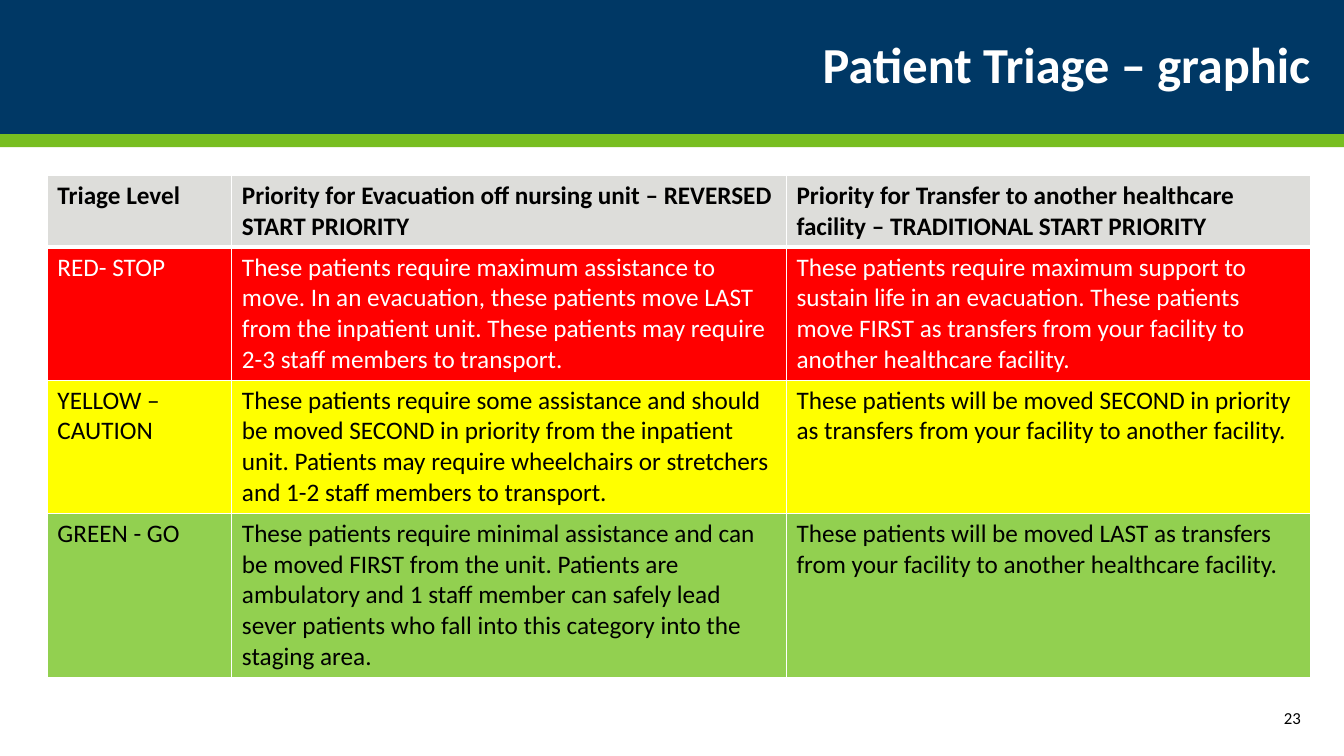
import lxml.etree
import pptx
import pptx.dml.color
import pptx.enum.shapes
import pptx.enum.text
import pptx.oxml.ns
import pptx.util
from pptx.util import Inches

FONT = "Calibri"
COLUMN_WIDTHS = (1.83, 5.5, 5.2)
ROW_HEIGHTS = (0.71, 1.32, 1.32, 1.62)
ROW_COLOURS = (
    ("DDDDDA", "000000"),
    ("FF0000", "FFFFFF"),
    ("FFFF00", "000000"),
    ("92D050", "000000"),
)
TRIAGE_ROWS = (
    (
        "Triage Level",
        "Priority for Evacuation off nursing unit – REVERSED START PRIORITY",
        "Priority for Transfer to another healthcare facility – TRADITIONAL START PRIORITY",
    ),
    (
        "RED- STOP",
        "These patients require maximum assistance to move. In an evacuation, these patients "
        "move LAST from the inpatient unit. These patients may require 2-3 staff members to transport.",
        "These patients require maximum support to sustain life in an evacuation. These patients "
        "move FIRST as transfers from your facility to another healthcare facility.",
    ),
    (
        "YELLOW – CAUTION",
        "These patients require some assistance and should be moved SECOND in priority from the "
        "inpatient unit. Patients may require wheelchairs or stretchers and 1-2 staff members to transport.",
        "These patients will be moved SECOND in priority as transfers from your facility to another facility.",
    ),
    (
        "GREEN - GO",
        "These patients require minimal assistance and can be moved FIRST from the unit. Patients are "
        "ambulatory and 1 staff member can safely lead sever patients who fall into this category "
        "into the staging area.",
        "These patients will be moved LAST as transfers from your facility to another healthcare facility.",
    ),
)


def colour(value):
    """Return the colour for a hex string."""
    return pptx.dml.color.RGBColor.from_string(value)


def write(frame, text, size=18, ink="000000", bold=False, align="LEFT", spacing=1.0):
    """Put one formatted paragraph into a text frame."""
    para = frame.paragraphs[0]
    para.alignment = getattr(pptx.enum.text.PP_ALIGN, align)
    para.line_spacing = spacing
    span = para.add_run()
    span.text = text
    span.font.name = FONT
    span.font.size = pptx.util.Pt(size)
    span.font.bold = bold
    span.font.color.rgb = colour(ink)


def add_border(cell, side, width):
    """Draw a white border on one side of a cell."""
    qn = pptx.oxml.ns.qn
    properties = cell._tc.get_or_add_tcPr()
    line = lxml.etree.SubElement(properties, qn(f"a:ln{side}"), w=str(pptx.util.Pt(width)))
    fill = lxml.etree.SubElement(line, qn("a:solidFill"))
    lxml.etree.SubElement(fill, qn("a:srgbClr"), val="FFFFFF")


def add_header(page, left, top, width, height):
    """Place the title over its blue band, with a green stripe below."""
    title = page.shapes.title
    title.left, title.top = Inches(left), Inches(top)
    title.width, title.height = Inches(width - 0.33), Inches(height)
    frame = title.text_frame
    frame.word_wrap = True
    frame.auto_size = pptx.enum.text.MSO_AUTO_SIZE.NONE
    frame.vertical_anchor = pptx.enum.text.MSO_ANCHOR.MIDDLE
    frame.margin_left = frame.margin_right = 0
    write(frame, "Patient Triage – graphic", size=36, ink="FFFFFF", bold=True, align="RIGHT", spacing=0.9)
    for offset, depth, fill in ((0, height, "003865"), (height, 0.13, "78BE21")):
        band = page.shapes.add_shape(
            pptx.enum.shapes.MSO_SHAPE.RECTANGLE,
            Inches(left), Inches(top + offset), Inches(width), Inches(depth),
        )
        band.shadow.inherit = False
        band.fill.solid()
        band.fill.fore_color.rgb = colour(fill)
        band.line.fill.background()
        title.element.addprevious(band.element)


def add_triage_table(page, left, top):
    """Place the table of triage levels and priorities."""
    table = page.shapes.add_table(
        len(TRIAGE_ROWS), len(COLUMN_WIDTHS), Inches(left), Inches(top),
        Inches(sum(COLUMN_WIDTHS)), Inches(sum(ROW_HEIGHTS)),
    ).table
    table.horz_banding = False
    for column, width in zip(table.columns, COLUMN_WIDTHS):
        column.width = Inches(width)
    for index, (row, height) in enumerate(zip(table.rows, ROW_HEIGHTS)):
        row.height = Inches(height)
        fill, ink = ROW_COLOURS[index]
        widths = {"L": 1, "R": 1, "T": 3 if index == 1 else 1, "B": 3 if index == 0 else 1}
        for cell, text in zip(row.cells, TRIAGE_ROWS[index]):
            for side, width in widths.items():
                add_border(cell, side, width)
            cell.fill.solid()
            cell.fill.fore_color.rgb = colour(fill)
            write(cell.text_frame, text, ink=ink, bold=index == 0)


def add_page_number(page, left, top, width, height):
    """Place the page number at the right of its box."""
    box = page.shapes.add_textbox(Inches(left), Inches(top), Inches(width), Inches(height))
    box.text_frame.word_wrap = True
    box.text_frame.vertical_anchor = pptx.enum.text.MSO_ANCHOR.MIDDLE
    write(box.text_frame, "23", size=12, align="RIGHT")


def main():
    """Build and save the slide."""
    deck = pptx.Presentation()
    deck.slide_width, deck.slide_height = Inches(13.33), Inches(7.5)
    page = deck.slides.add_slide(deck.slide_layouts.get_by_name("Title Only"))
    add_header(page, 0, 0, 13.33, 1.33)
    add_triage_table(page, 0.47, 1.74)
    add_page_number(page, 11.4, 6.92, 1.6, 0.4)
    deck.save("out.pptx")


if __name__ == "__main__":
    main()
